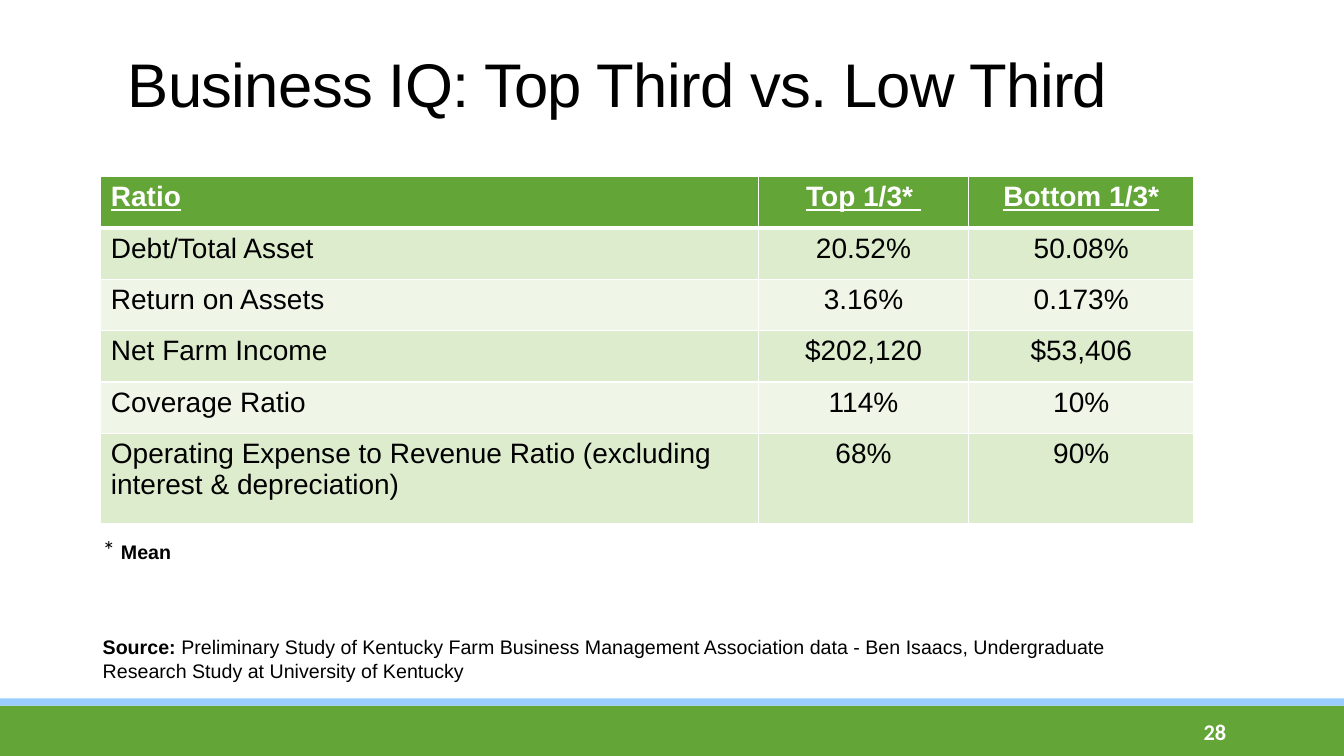
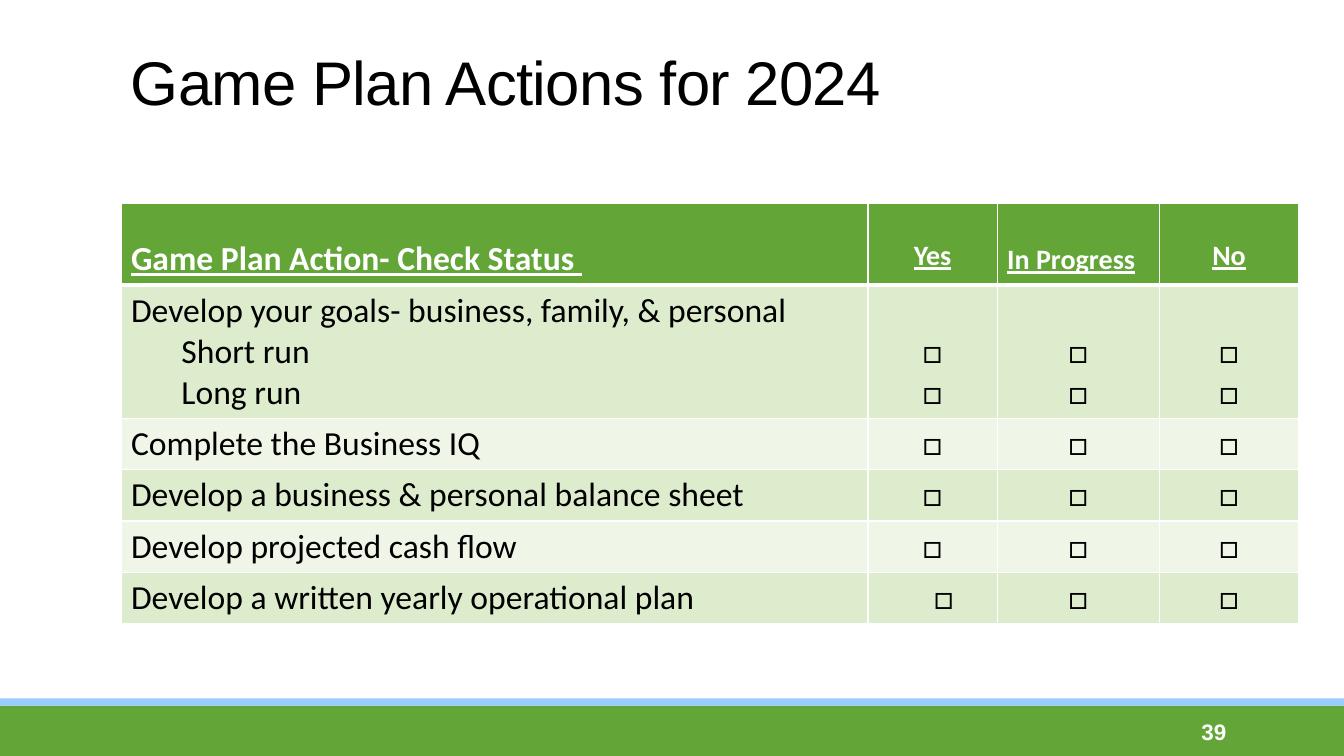
from dataclasses import dataclass, replace

import lxml.etree
import pptx
import pptx.dml.color
import pptx.enum.shapes
import pptx.enum.text
import pptx.oxml.ns
import pptx.presentation
import pptx.slide
import pptx.text.text
import pptx.util

ALIGN = pptx.enum.text.PP_ALIGN
ANCHOR = pptx.enum.text.MSO_ANCHOR
SCALE = 9144  # EMU in one px, 100 px to the inch
WIDE, HIGH = 1333, 750
PAD_X, PAD_Y = 10, 5
INDENT = 50
BOX = "□"


@dataclass(frozen=True)
class Face:
    size: int
    font: str = "Arial"
    color: str = "000000"
    bold: bool = False
    under: bool = False
    space: int = 0


@dataclass(frozen=True)
class Theme:
    green: str = "63A537"
    blue: str = "99CCFF"
    white: str = "FFFFFF"
    stripes: tuple[str, str] = ("DEECCE", "EFF6E8")
    thin: int = 1
    thick: int = 3
    title: Face = Face(44, space=-50)
    note: Face = Face(14)
    strong: Face = Face(14, bold=True)
    star: Face = Face(18, "Calibri")
    ratio: Face = Face(20)
    plan: Face = Face(24, "Calibri")
    page: Face = Face(16, color="FFFFFF", bold=True)


THEME = Theme()


@dataclass(frozen=True)
class Rect:
    left: int
    top: int
    width: int
    height: int

    def emu(self) -> tuple[int, int, int, int]:
        return px(self.left), px(self.top), px(self.width), px(self.height)


@dataclass(frozen=True)
class Span:
    text: str
    face: Face


@dataclass(frozen=True)
class Cell:
    """Text of a table cell; drop and shift add to its top and left margins."""
    text: str
    face: Face
    align: ALIGN = ALIGN.CENTER
    drop: int = 0
    shift: int = 0


def px(count: int) -> pptx.util.Emu:
    return pptx.util.Emu(count * SCALE)


def tint(color: str) -> pptx.dml.color.RGBColor:
    return pptx.dml.color.RGBColor.from_string(color)


def style(run: pptx.text.text._Run, face: Face) -> None:
    font = run.font
    font.name, font.size = face.font, pptx.util.Pt(face.size)
    font.bold, font.underline = face.bold, face.under
    font.color.rgb = tint(face.color)
    if face.space:
        run._r.get_or_add_rPr().set("spc", str(face.space))


def add_text(slide: pptx.slide.Slide, rect: Rect, *spans: Span,
             align: ALIGN = ALIGN.LEFT, anchor: ANCHOR = ANCHOR.TOP,
             inset: int = PAD_Y) -> None:
    frame = slide.shapes.add_textbox(*rect.emu()).text_frame
    frame.word_wrap = True
    frame.vertical_anchor = anchor
    frame.margin_top = px(inset)
    line = frame.paragraphs[0]
    line.alignment = align
    for span in spans:
        run = line.add_run()
        run.text = span.text
        style(run, span.face)


def add_band(slide: pptx.slide.Slide, rect: Rect, color: str) -> None:
    kind = pptx.enum.shapes.MSO_SHAPE.RECTANGLE
    band = slide.shapes.add_shape(kind, *rect.emu())
    band.shadow.inherit = False
    band.fill.solid()
    band.fill.fore_color.rgb = tint(color)
    band.line.fill.background()


def add_slide(deck: pptx.presentation.Presentation, title: str, spot: Rect,
              page: str, font: str) -> pptx.slide.Slide:
    """Start a slide with its bands, title and page number."""
    slide = deck.slides.add_slide(deck.slide_layouts[6])
    add_band(slide, Rect(0, 700, WIDE, 50), THEME.green)
    add_band(slide, Rect(0, 693, WIDE, 7), THEME.blue)
    add_text(slide, spot, Span(title, THEME.title), inset=13)
    add_text(slide, Rect(1083, 706, 143, 40),
             Span(page, replace(THEME.page, font=font)),
             align=ALIGN.RIGHT, anchor=ANCHOR.MIDDLE)
    return slide


def add_edges(slot: pptx.table._Cell, top: int, bottom: int) -> None:
    """Draw white cell borders, which must stand before the fill."""
    props = slot._tc.get_or_add_tcPr()
    widths = {"lnL": THEME.thin, "lnR": THEME.thin, "lnT": top, "lnB": bottom}
    name = pptx.oxml.ns.qn
    for spot, (tag, width) in enumerate(widths.items()):
        edge = lxml.etree.Element(name(f"a:{tag}"), w=str(pptx.util.Pt(width)))
        fill = lxml.etree.SubElement(edge, name("a:solidFill"))
        lxml.etree.SubElement(fill, name("a:srgbClr"), val=THEME.white)
        props.insert(spot, edge)


def fill_cell(slot: pptx.table._Cell, cell: Cell, row: int) -> None:
    slot.margin_left, slot.margin_right = px(PAD_X + cell.shift), px(PAD_X)
    slot.margin_top, slot.margin_bottom = px(PAD_Y + cell.drop), px(PAD_Y)
    slot.fill.solid()
    shade = THEME.stripes[(row - 1) % 2] if row else THEME.green
    slot.fill.fore_color.rgb = tint(shade)
    add_edges(slot, THEME.thick if row == 1 else THEME.thin,
              THEME.thin if row else THEME.thick)
    slot.text_frame.text = cell.text
    for count, line in enumerate(slot.text_frame.paragraphs):
        line.alignment = cell.align
        if count and cell.align == ALIGN.LEFT:
            line.level = 1
            props = line._p.get_or_add_pPr()
            props.set("marL", str(px(INDENT)))
            props.set("indent", "0")
        for run in line.runs:
            style(run, cell.face)


def add_grid(slide: pptx.slide.Slide, left: int, top: int, cols: list[int],
             rows: list[int], cells: list[list[Cell]]) -> None:
    rect = Rect(left, top, sum(cols), sum(rows))
    grid = slide.shapes.add_table(len(rows), len(cols), *rect.emu()).table
    for col, width in zip(grid.columns, cols):
        col.width = px(width)
    for row, height in zip(grid.rows, rows):
        row.height = px(height)
    for row, line in enumerate(cells):
        for col, cell in enumerate(line):
            fill_cell(grid.cell(row, col), cell, row)


def head_face(face: Face) -> Face:
    return replace(face, color=THEME.white, bold=True, under=True)


def draw_ratios(deck: pptx.presentation.Presentation) -> None:
    slide = add_slide(deck, "Business IQ: Top Third vs. Low Third",
                      Rect(117, 33, 1146, 109), "28", "Calibri")
    data = [
        ("Ratio", "Top 1/3* ", "Bottom 1/3*"),
        ("Debt/Total Asset", "20.52%", "50.08%"),
        ("Return on Assets", "3.16%", "0.173%"),
        ("Net Farm Income", "$202,120", "$53,406"),
        ("Coverage Ratio", "114%", "10%"),
        ("Operating Expense to Revenue Ratio (excluding interest & "
         "depreciation)", "68%", "90%"),
    ]
    cells = []
    for row, (name, *values) in enumerate(data):
        face = THEME.ratio if row else head_face(THEME.ratio)
        cells.append([Cell(name, face, ALIGN.LEFT),
                      *(Cell(value, face) for value in values)])
    add_grid(slide, 100, 175, [652, 209, 223], [51] * 5 + [90], cells)
    add_text(slide, Rect(92, 625, 1048, 57), Span("Source: ", THEME.strong),
             Span("Preliminary Study of Kentucky Farm Business Management "
                  "Association data - Ben Isaacs, Undergraduate Research "
                  "Study at University of Kentucky", THEME.note))
    add_text(slide, Rect(92, 525, 242, 40), Span("* ", THEME.star),
             Span("Mean", THEME.strong))


def draw_plan(deck: pptx.presentation.Presentation) -> None:
    slide = add_slide(deck, "Game Plan Actions for 2024",
                      Rect(120, 31, 1100, 94), "39", "Arial")
    face = THEME.plan
    head = head_face(face)
    small = replace(head, size=20)
    cells = [
        [Cell("Game Plan Action- Check Status ", head, ALIGN.LEFT, drop=30),
         Cell("Yes", small, drop=30),
         Cell("In Progress", small, ALIGN.LEFT, drop=34),
         Cell("No", small, drop=30)],
        [Cell("Develop your goals- business, family, & personal\n"
              "Short run\nLong run", face, ALIGN.LEFT),
         *[Cell(f"{BOX}\n{BOX}", face, drop=41)] * 3],
    ]
    tasks = ["Complete the Business IQ",
             "Develop a business & personal balance sheet",
             "Develop projected cash flow",
             "Develop a written yearly operational plan"]
    for task in tasks:
        shift = 22 if task == tasks[-1] else 0
        cells.append([Cell(task, face, ALIGN.LEFT),
                      Cell(BOX, face, shift=shift),
                      *[Cell(BOX, face)] * 2])
    add_grid(slide, 120, 202, [741, 128, 161, 138],
             [81, 132] + [51] * len(tasks), cells)


def main() -> None:
    deck = pptx.Presentation()
    deck.slide_width, deck.slide_height = px(WIDE), px(HIGH)
    draw_ratios(deck)
    draw_plan(deck)
    deck.save("out.pptx")


if __name__ == "__main__":
    main()
